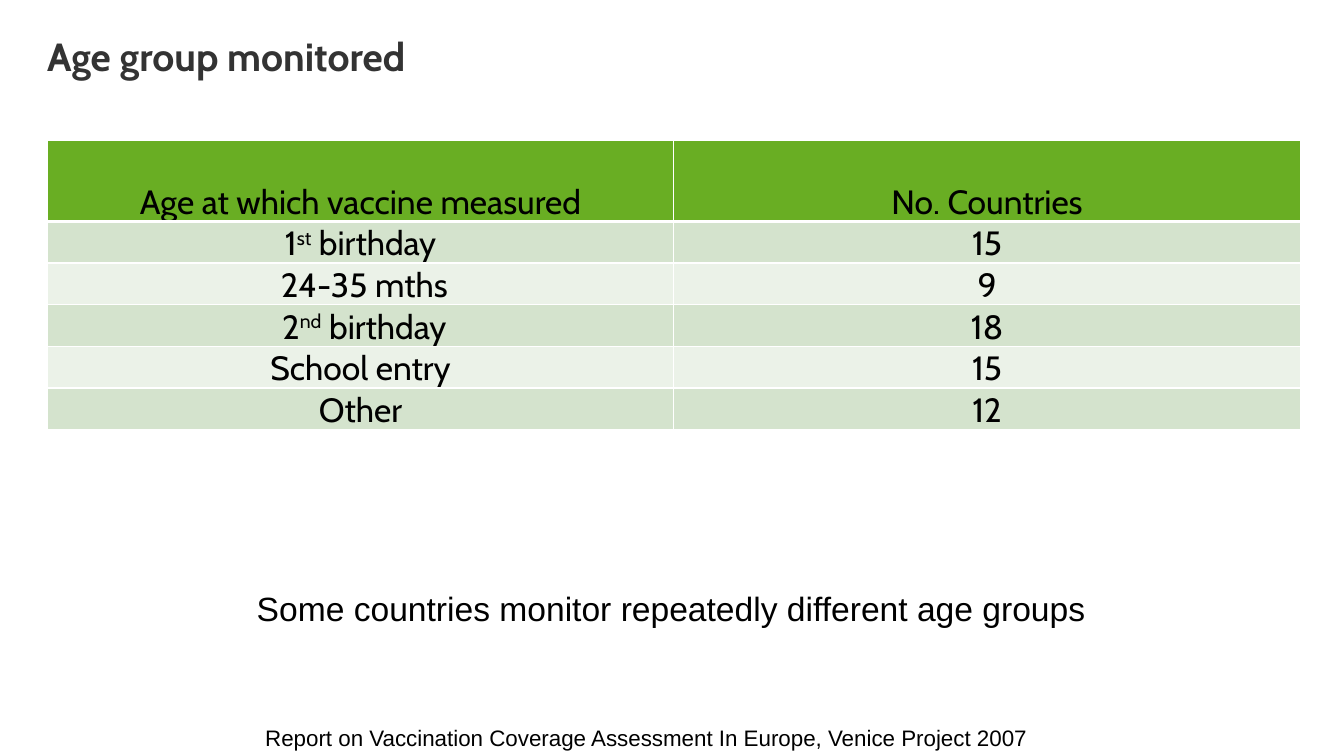
from dataclasses import dataclass

from lxml import etree
from pptx import Presentation
from pptx.dml.color import RGBColor
from pptx.enum.text import MSO_ANCHOR, PP_ALIGN
from pptx.oxml.ns import qn
from pptx.util import Cm, Pt

LEFT, CENTER, RIGHT = PP_ALIGN.LEFT, PP_ALIGN.CENTER, PP_ALIGN.RIGHT
TOP, BOTTOM = MSO_ANCHOR.TOP, MSO_ANCHOR.BOTTOM

BLACK, WHITE, CHARCOAL = "000000", "FFFFFF", "333333"
HEADER_GREEN, BAND_FILLS = "69AE23", ("D4E3CD", "EBF2E8")

HEADER_HEIGHT, ROW_HEIGHT, COLUMN_WIDTH = 2.05, 1.05, 15.79
THIN, THICK = 1, 3


@dataclass
class TextLine:
    text: str
    left: float
    top: float
    width: float
    height: float
    size: float
    font: str = "Arial"
    color: str = BLACK
    bold: bool = False
    align: PP_ALIGN = LEFT
    margins: tuple[float, float] = (0.25, 0.13)
    spacing: float = 1.0


@dataclass
class AgeGroup:
    age: str
    countries: str
    ordinal: str = ""
    event: str = ""


TEXT_LINES = [
    TextLine("Age group monitored", 1.19, 0.94, 28.65, 2.21, 28, "Cabin",
             CHARCOAL, bold=True, margins=(0, 0), spacing=0.9),
    TextLine("Some countries monitor repeatedly different age groups",
             6.22, 14.68, 23.42, 1.3, 24),
    TextLine("Report on Vaccination Coverage Assessment In Europe, "
             "Venice Project 2007", 3.53, 18.11, 22.61, 0.94, 16, align=RIGHT),
]

HEADER = AgeGroup("Age at which vaccine measured", "No. Countries")
AGE_GROUPS = [
    AgeGroup("1", "15", "st", " birthday"),
    AgeGroup(" 24-35 mths", "9"),
    AgeGroup(" 2", "18", "nd", " birthday"),
    AgeGroup("School entry", "15"),
    AgeGroup("Other", "12"),
]


def rgb(color: str) -> RGBColor:
    return RGBColor.from_string(color)


def style_run(run, size: float, font: str, color: str, bold: bool = False) -> None:
    run.font.size = Pt(size)
    run.font.name = font
    run.font.color.rgb = rgb(color)
    run.font.bold = bold


def add_text_line(slide, line: TextLine) -> None:
    box = slide.shapes.add_textbox(Cm(line.left), Cm(line.top),
                                   Cm(line.width), Cm(line.height))
    frame = box.text_frame
    frame.word_wrap = True
    frame.vertical_anchor = TOP
    side, end = line.margins
    frame.margin_left = frame.margin_right = Cm(side)
    frame.margin_top = frame.margin_bottom = Cm(end)
    paragraph = frame.paragraphs[0]
    paragraph.text = line.text
    paragraph.alignment = line.align
    paragraph.line_spacing = line.spacing
    style_run(paragraph.runs[0], line.size, line.font, line.color, line.bold)


def set_borders(cell, top: int, bottom: int) -> None:
    properties = cell._tc.get_or_add_tcPr()
    widths = {"a:lnL": THIN, "a:lnR": THIN, "a:lnT": top, "a:lnB": bottom}
    for position, (side, width) in enumerate(widths.items()):
        border = etree.Element(qn(side), w=str(Pt(width)))
        fill = etree.SubElement(border, qn("a:solidFill"))
        etree.SubElement(fill, qn("a:srgbClr"), val=WHITE)
        properties.insert(position, border)


def fill_cell(cell, parts: list[str], color: str, top: int, bottom: int) -> None:
    """Write the parts of a label; the second one is raised."""
    cell.fill.solid()
    cell.fill.fore_color.rgb = rgb(color)
    cell.vertical_anchor = BOTTOM
    cell.margin_left = cell.margin_right = cell.margin_top = Cm(0.03)
    cell.margin_bottom = 0
    paragraph = cell.text_frame.paragraphs[0]
    paragraph.alignment = CENTER
    paragraph.line_spacing = 0.9
    for position, part in enumerate(parts):
        run = paragraph.add_run()
        run.text = part
        style_run(run, 24, "Cabin", BLACK)
        if position == 1:
            run.font._element.set("baseline", "30000")
    set_borders(cell, top, bottom)


def add_age_table(slide) -> None:
    groups = [HEADER, *AGE_GROUPS]
    height = HEADER_HEIGHT + ROW_HEIGHT * len(AGE_GROUPS)
    table = slide.shapes.add_table(len(groups), 2, Cm(1.19), Cm(3.53),
                                   Cm(2 * COLUMN_WIDTH), Cm(height)).table
    for column in table.columns:
        column.width = Cm(COLUMN_WIDTH)
    for index, group in enumerate(groups):
        is_header = index == 0
        table.rows[index].height = Cm(HEADER_HEIGHT if is_header else ROW_HEIGHT)
        color = HEADER_GREEN if is_header else BAND_FILLS[(index - 1) % 2]
        top = THICK if index == 1 else THIN
        bottom = THICK if is_header else THIN
        age_parts = [part for part in (group.age, group.ordinal, group.event) if part]
        for column, parts in enumerate((age_parts, [group.countries])):
            fill_cell(table.cell(index, column), parts, color, top, bottom)


def main() -> None:
    presentation = Presentation()
    presentation.slide_width, presentation.slide_height = Cm(33.87), Cm(19.05)
    slide = presentation.slides.add_slide(presentation.slide_layouts[6])

    # Title, remark and source
    for line in TEXT_LINES:
        add_text_line(slide, line)

    # Countries by age group
    add_age_table(slide)

    presentation.save("out.pptx")


if __name__ == "__main__":
    main()
